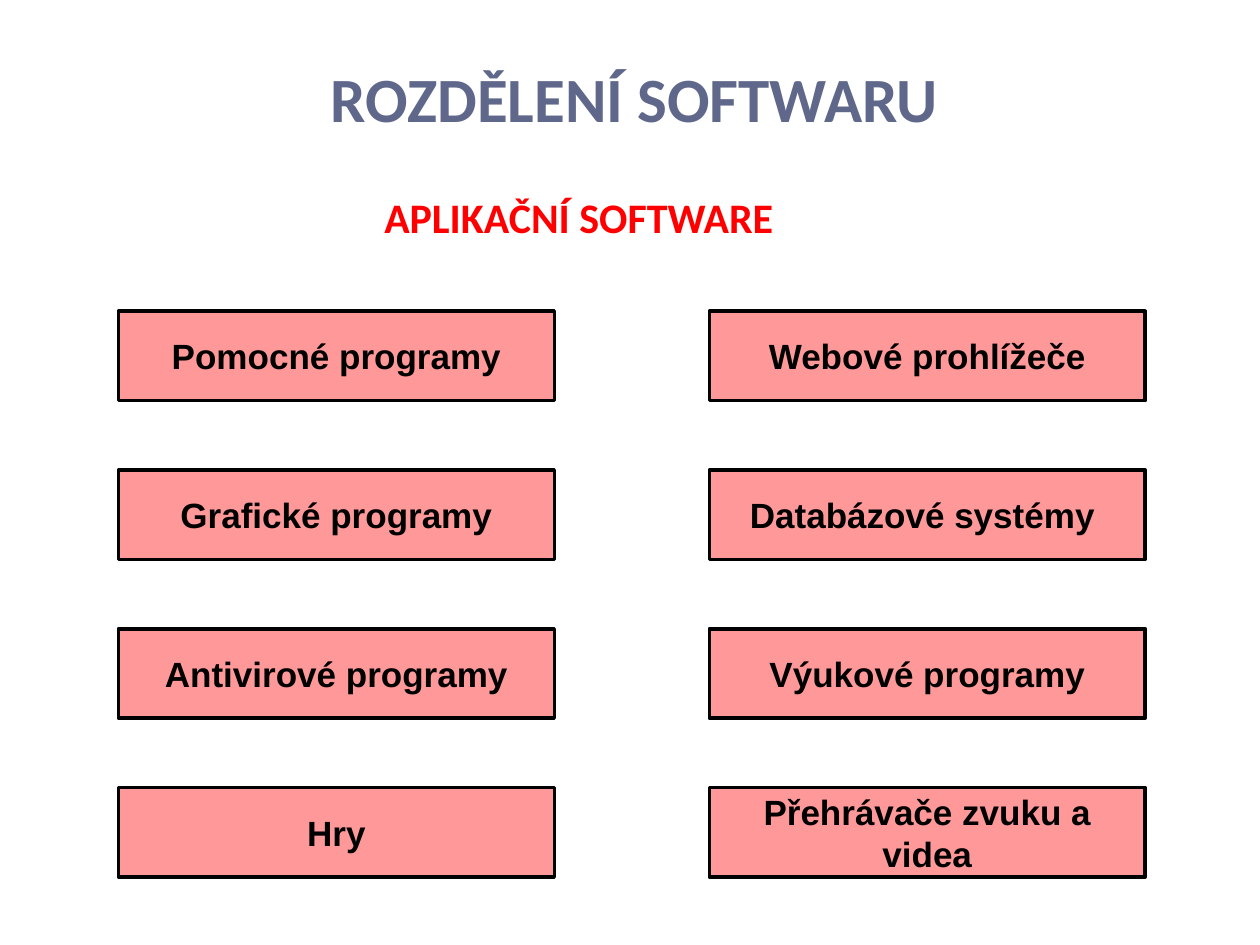
from pptx import Presentation
from pptx.dml.color import RGBColor
from pptx.enum.shapes import MSO_SHAPE
from pptx.enum.text import MSO_ANCHOR, MSO_AUTO_SIZE, PP_ALIGN
from pptx.util import Inches, Pt

COLORS = {"title": "5F688B", "subtitle": "FF0000", "box": "FF9999", "ink": "000000"}
CATEGORIES = [
    ("Pomocné programy", "Webové prohlížeče"),
    ("Grafické programy", "Databázové systémy "),
    ("Antivirové programy", "Výukové programy"),
    ("Hry", "Přehrávače zvuku a videa"),
]
LEFT, TOP, COL_STEP, ROW_STEP = 0.94, 2.47, 4.69, 1.26
BOX_W, BOX_H = 3.46, 0.71


class SlideBuilder:
    """Holds the style and the current slide and adds its elements."""

    def __init__(self, prs):
        self.slide = prs.slides.add_slide(prs.slide_layouts[5])

    def color(self, name):
        return RGBColor.from_string(COLORS[name])

    def set_text(self, sp, text, font, size, color, align, anchor):
        tf = sp.text_frame
        tf.text = text
        tf.word_wrap = True
        tf.auto_size = MSO_AUTO_SIZE.NONE
        tf.vertical_anchor = anchor
        p = tf.paragraphs[0]
        p.alignment = align
        r = p.runs[0]
        r.font.name, r.font.size, r.font.bold = font, Pt(size), True
        r.font.color.rgb = self.color(color)
        return p

    def title(self, text, x, y, w, h):
        sp = self.slide.shapes.title
        sp.left, sp.top, sp.width, sp.height = map(Inches, (x, y, w, h))
        p = self.set_text(sp, text, "Calibri", 36, "title", PP_ALIGN.CENTER, MSO_ANCHOR.BOTTOM)
        p.line_spacing = Pt(20)

    def subtitle(self, text, x, y, w, h):
        sp = self.slide.shapes.add_textbox(*map(Inches, (x, y, w, h)))
        self.set_text(sp, text, "Calibri", 24, "subtitle", PP_ALIGN.LEFT, MSO_ANCHOR.TOP)
        sp.text_frame.margin_left = Inches(0.19)

    def box(self, text, x, y, w, h):
        sp = self.slide.shapes.add_shape(MSO_SHAPE.RECTANGLE, *map(Inches, (x, y, w, h)))
        sp.shadow.inherit = False
        sp.fill.solid()
        sp.fill.fore_color.rgb = self.color("box")
        sp.line.color.rgb = self.color("ink")
        sp.line.width = Pt(2)
        self.set_text(sp, text, "Arial", 20, "ink", PP_ALIGN.CENTER, MSO_ANCHOR.MIDDLE)


def main():
    prs = Presentation()
    prs.slide_width, prs.slide_height = Inches(10), Inches(7.5)
    s = SlideBuilder(prs)
    s.title("ROZDĚLENÍ SOFTWARU", 0.43, 0.44, 9.21, 0.68)
    s.subtitle("APLIKAČNÍ SOFTWARE", 2.86, 1.47, 4.36, 0.5)
    for row, names in enumerate(CATEGORIES):
        for col, name in enumerate(names):
            s.box(name, LEFT + col * COL_STEP, TOP + row * ROW_STEP, BOX_W, BOX_H)
    prs.save("out.pptx")


if __name__ == "__main__":
    main()
